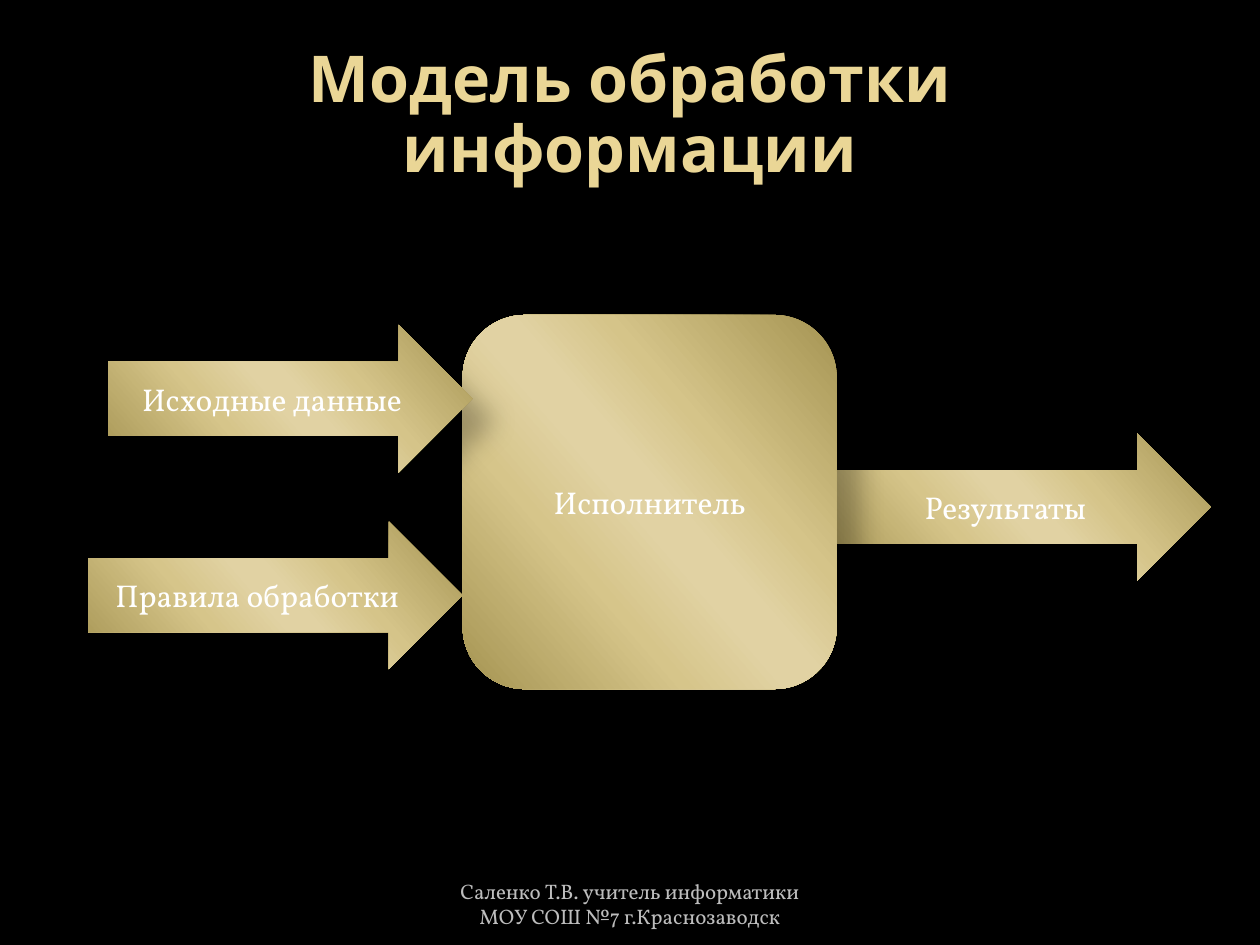
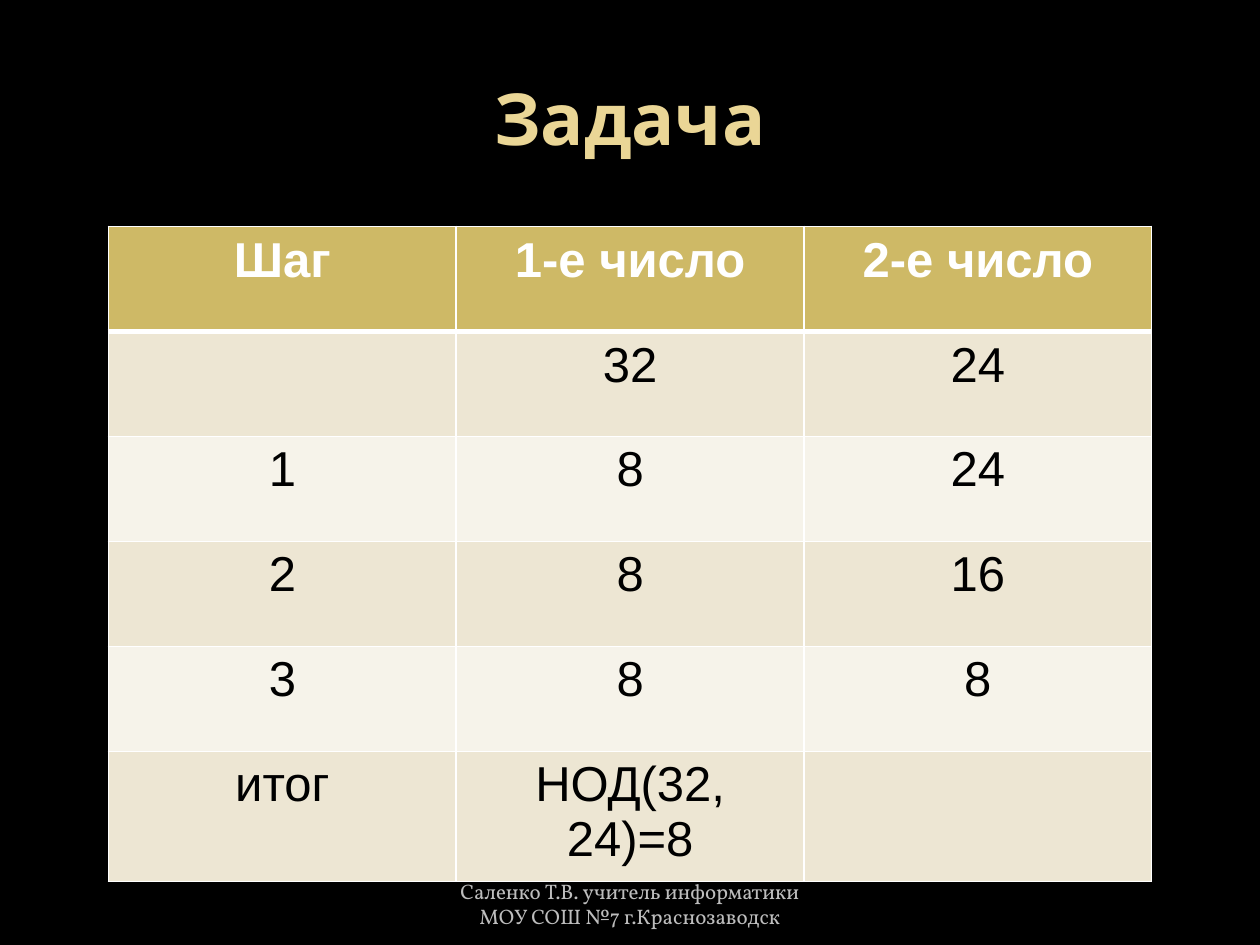
from dataclasses import dataclass

from lxml.etree import SubElement
from pptx import Presentation
from pptx.dml.color import RGBColor
from pptx.enum.shapes import MSO_SHAPE
from pptx.enum.text import MSO_ANCHOR, MSO_AUTO_SIZE, PP_ALIGN
from pptx.oxml.ns import qn
from pptx.util import Pt


@dataclass(frozen=True)
class Theme:
    background: str = "000000"
    title: str = "EAD696"
    light_text: str = "FFFFFF"
    dark_text: str = "000000"
    footer: str = "BDBDBD"
    shadow: str = "000000"
    border: str = "FFFFFF"
    table_header: str = "CEB966"
    table_bands: tuple = ("EDE6D3", "F6F3EA")
    gold_stops: tuple = (
        (0, "A59452"),
        (33, "D5C489"),
        (47, "E1D2A3"),
        (53, "E1D2A3"),
        (68, "D6C58A"),
        (100, "A59452"),
    )
    gold_angle: int = 221
    title_font: str = "Noto Sans"
    body_font: str = "Vollkorn"
    table_font: str = "Arial"
    title_size: float = 41
    small_title_size: float = 36.9
    body_size: float = 18
    table_size: float = 28
    footer_size: float = 12


THEME = Theme()
FOOTER = "Саленко Т.В. учитель информатики МОУ СОШ №7 г.Краснозаводск"
STEPS = [
    ("Шаг", "1-е число", "2-е число"),
    ("", "32", "24"),
    ("1", "8", "24"),
    ("2", "8", "16"),
    ("3", "8", "8"),
    ("итог", "НОД(32, 24)=8", ""),
]


def write(text_frame, text, font_name, size, color, bold=False):
    text_frame.text = text
    paragraph = text_frame.paragraphs[0]
    paragraph.alignment = PP_ALIGN.CENTER
    paragraph.font.name = font_name
    paragraph.font.size = Pt(size)
    paragraph.font.bold = bold
    paragraph.font.color.rgb = RGBColor.from_string(color)
    return paragraph


def add_titled_slide(presentation, title, size, line_spacing=1.0):
    slide = presentation.slides.add_slide(presentation.slide_layouts[5])
    placeholder = slide.shapes.title
    placeholder.left, placeholder.top = Pt(36), Pt(21.6)
    placeholder.width, placeholder.height = Pt(648), Pt(90)
    text_frame = placeholder.text_frame
    text_frame.auto_size = MSO_AUTO_SIZE.NONE
    text_frame.vertical_anchor = MSO_ANCHOR.MIDDLE
    text_frame.margin_left = text_frame.margin_right = Pt(14)
    paragraph = write(text_frame, title, THEME.title_font, size, THEME.title, bold=True)
    paragraph.line_spacing = line_spacing
    add_footer(slide)
    return slide


def add_footer(slide):
    text_frame = slide.shapes.add_textbox(Pt(246), Pt(505.5), Pt(228), Pt(28.75)).text_frame
    text_frame.word_wrap = True
    text_frame.vertical_anchor = MSO_ANCHOR.BOTTOM
    write(text_frame, FOOTER, THEME.body_font, THEME.footer_size, THEME.footer)


def fill_with_gold(shape):
    shape.fill.gradient()
    shape.fill.gradient_angle = THEME.gold_angle
    stops = shape.element.spPr.find(f".//{qn('a:gsLst')}")
    stops.clear()
    for position, color in THEME.gold_stops:
        stop = SubElement(stops, qn("a:gs"), pos=str(position * 1000))
        SubElement(stop, qn("a:srgbClr"), val=color)


def cast_shadow(shape):
    shape.shadow.inherit = False
    effects = shape.element.spPr.find(qn("a:effectLst"))
    shadow = SubElement(
        effects,
        qn("a:outerShdw"),
        blurRad=str(Pt(15)),
        dist=str(Pt(18)),
        dir=str(45 * 60000),
        rotWithShape="0",
    )
    color = SubElement(shadow, qn("a:srgbClr"), val=THEME.shadow)
    SubElement(color, qn("a:alpha"), val="26000")


def add_gold_shape(slide, kind, text, left, top, width, height):
    shape = slide.shapes.add_shape(kind, Pt(left), Pt(top), Pt(width), Pt(height))
    fill_with_gold(shape)
    shape.line.fill.background()
    cast_shadow(shape)
    shape.text_frame.vertical_anchor = MSO_ANCHOR.MIDDLE
    write(shape.text_frame, text, THEME.body_font, THEME.body_size, THEME.light_text)


def add_arrow(slide, text, left, top, width):
    add_gold_shape(slide, MSO_SHAPE.RIGHT_ARROW, text, left, top, width, 84.4)


def set_borders(cell, top_width, bottom_width):
    properties = cell._tc.get_or_add_tcPr()
    widths = {"a:lnL": 1, "a:lnR": 1, "a:lnT": top_width, "a:lnB": bottom_width}
    for side, width in widths.items():
        line = SubElement(properties, qn(side), w=str(Pt(width)))
        fill = SubElement(line, qn("a:solidFill"))
        SubElement(fill, qn("a:srgbClr"), val=THEME.border)


def add_step_table(slide, rows):
    row_count, column_count = len(rows), len(rows[0])
    table = slide.shapes.add_table(
        row_count, column_count, Pt(62), Pt(129.4), Pt(596.16), Pt(60 * row_count)
    ).table
    for row_index, row in enumerate(rows):
        is_header = row_index == 0
        fill = THEME.table_header if is_header else THEME.table_bands[(row_index - 1) % 2]
        color = THEME.light_text if is_header else THEME.dark_text
        for column_index, text in enumerate(row):
            cell = table.cell(row_index, column_index)
            set_borders(cell, 3 if row_index == 1 else 1, 3 if is_header else 1)
            cell.fill.solid()
            cell.fill.fore_color.rgb = RGBColor.from_string(fill)
            write(cell.text_frame, text, THEME.table_font, THEME.table_size, color, is_header)


def add_model_slide(presentation):
    slide = add_titled_slide(
        presentation, "Модель обработки информации", THEME.small_title_size, 0.9
    )
    add_arrow(slide, "Правила обработки", 50.6, 298, 213.8)
    add_arrow(slide, "Результаты", 478.2, 247.5, 213.8)
    add_gold_shape(
        slide, MSO_SHAPE.ROUNDED_RECTANGLE, "Исполнитель", 264.4, 180, 213.8, 213.8
    )
    add_arrow(slide, "Исходные данные", 62, 185.6, 208)


def add_task_slide(presentation):
    slide = add_titled_slide(presentation, "Задача", THEME.title_size)
    add_step_table(slide, STEPS)


def main():
    presentation = Presentation()
    presentation.slide_width, presentation.slide_height = Pt(720), Pt(540)
    background = presentation.slide_master.background.fill
    background.solid()
    background.fore_color.rgb = RGBColor.from_string(THEME.background)
    add_model_slide(presentation)
    add_task_slide(presentation)
    presentation.save("out.pptx")


if __name__ == "__main__":
    main()
